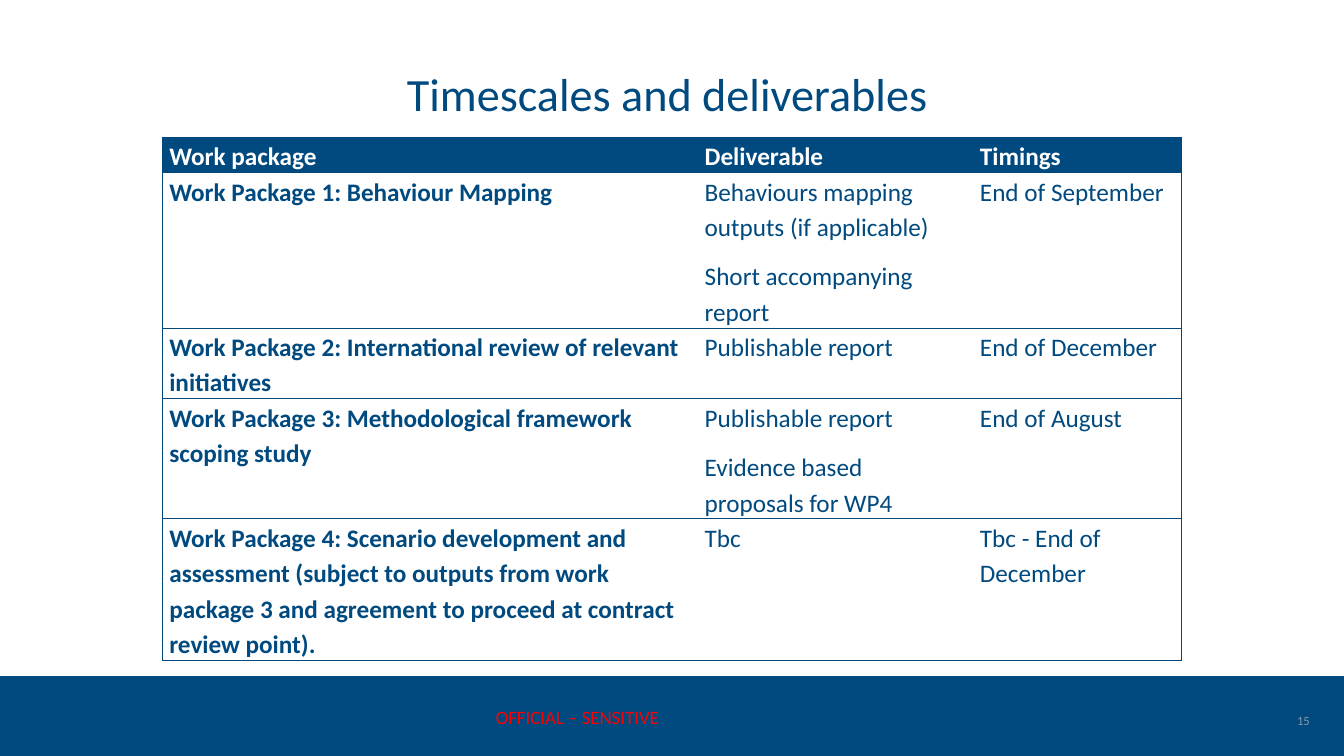
from dataclasses import dataclass

from lxml.etree import SubElement
from pptx import Presentation
from pptx.dml.color import RGBColor
from pptx.enum.shapes import MSO_SHAPE
from pptx.enum.text import MSO_ANCHOR, PP_ALIGN
from pptx.oxml.ns import qn
from pptx.slide import Slide
from pptx.table import _Cell as Cell
from pptx.text.text import _Paragraph as Paragraph
from pptx.util import Inches, Pt

FONT = "Calibri"
BLUE = "004A7F"
BORDER = "00487C"
WHITE = "FFFFFF"


@dataclass
class Label:
    text: str
    left: float
    top: float
    width: float
    height: float
    size: float
    color: str
    align: PP_ALIGN = PP_ALIGN.LEFT
    anchor: MSO_ANCHOR = MSO_ANCHOR.TOP


@dataclass
class WorkPackage:
    name: str
    deliverables: str
    timing: str
    height: float


LABELS = [
    Label("Timescales and deliverables ", 0.67, 0.3, 12, 1.25, 33, BLUE,
          PP_ALIGN.CENTER, MSO_ANCHOR.MIDDLE),
    Label("15", 9.98, 6.95, 3.11, 0.4, 9, "8C96AB",
          PP_ALIGN.RIGHT, MSO_ANCHOR.MIDDLE),
    Label("OFFICIAL – SENSITIVE", 4.82, 6.95, 2.57, 0.4, 13.5, "FF0000"),
]

COLUMN_WIDTHS = [5.31, 2.73, 2.07]
ROWS = [
    WorkPackage("Work package", "Deliverable", "Timings", 0.35),
    WorkPackage("Work Package 1: Behaviour Mapping",
                "Behaviours mapping outputs (if applicable)\n"
                "Short accompanying report",
                "End of September", 1.54),
    WorkPackage("Work Package 2: International review of relevant initiatives",
                "Publishable report", "End of December", 0.7),
    WorkPackage("Work Package 3: Methodological framework scoping study",
                "Publishable report\nEvidence based proposals for WP4",
                "End of August", 1.19),
    WorkPackage("Work Package 4: Scenario development and assessment (subject "
                "to outputs from work package 3 and agreement to proceed at "
                "contract review point).",
                "Tbc", "Tbc - End of December", 1.4),
]


def rgb(color: str) -> RGBColor:
    return RGBColor.from_string(color)


def format_runs(paragraph: Paragraph, size: float, color: str,
                bold: bool = False) -> None:
    for run in paragraph.runs:
        run.font.name = FONT
        run.font.size = Pt(size)
        run.font.bold = bold
        run.font.color.rgb = rgb(color)


def add_footer_band(slide: Slide) -> None:
    band = slide.shapes.add_shape(MSO_SHAPE.RECTANGLE, Inches(0), Inches(6.72),
                                  Inches(13.33), Inches(0.8))
    band.shadow.inherit = False
    band.fill.solid()
    band.fill.fore_color.rgb = rgb(BLUE)
    band.line.color.rgb = rgb(BLUE)
    band.line.width = Pt(2)


def add_label(slide: Slide, label: Label) -> None:
    box = slide.shapes.add_textbox(Inches(label.left), Inches(label.top),
                                   Inches(label.width), Inches(label.height))
    frame = box.text_frame
    frame.word_wrap = True
    frame.vertical_anchor = label.anchor
    frame.text = label.text
    paragraph = frame.paragraphs[0]
    paragraph.alignment = label.align
    format_runs(paragraph, label.size, label.color)


def set_borders(cell: Cell, sides: str) -> None:
    """Draw the sides named by L, R, T and B, and clear the others."""
    properties = cell._tc.get_or_add_tcPr()
    for side in "LRTB":
        line = SubElement(properties, qn(f"a:ln{side}"), w=str(Pt(0.75)))
        if side in sides:
            fill = SubElement(line, qn("a:solidFill"))
            SubElement(fill, qn("a:srgbClr"), val=BORDER)
        else:
            SubElement(line, qn("a:noFill"))


def fill_cell(cell: Cell, text: str, is_header: bool, bold: bool) -> None:
    cell.margin_left = cell.margin_right = Inches(0.07)
    cell.margin_top = cell.margin_bottom = Inches(0)
    cell.fill.solid()
    cell.fill.fore_color.rgb = rgb(BLUE if is_header else WHITE)
    cell.text_frame.text = text
    for paragraph in cell.text_frame.paragraphs:
        paragraph.line_spacing = 1.15
        paragraph.space_after = Pt(10)
        format_runs(paragraph, 18, WHITE if is_header else BLUE, bold)


def add_work_package_table(slide: Slide) -> None:
    frame = slide.shapes.add_table(
        len(ROWS), len(COLUMN_WIDTHS), Inches(1.61), Inches(1.36),
        Inches(sum(COLUMN_WIDTHS)), Inches(sum(row.height for row in ROWS)))
    table = frame.table
    table.horz_banding = False
    for column, width in zip(table.columns, COLUMN_WIDTHS):
        column.width = Inches(width)
    last_column = len(COLUMN_WIDTHS) - 1
    for row_index, row in enumerate(ROWS):
        table.rows[row_index].height = Inches(row.height)
        is_header = row_index == 0
        for column_index, text in enumerate(
                (row.name, row.deliverables, row.timing)):
            cell = table.cell(row_index, column_index)
            outer = {0: "L", last_column: "R"}.get(column_index, "")
            set_borders(cell, "TB" + outer)
            fill_cell(cell, text, is_header, is_header or column_index == 0)


def main() -> None:
    presentation = Presentation()
    presentation.slide_width = Inches(13.33)
    presentation.slide_height = Inches(7.5)
    slide = presentation.slides.add_slide(presentation.slide_layouts[6])
    add_footer_band(slide)
    add_work_package_table(slide)
    for label in LABELS:
        add_label(slide, label)
    presentation.save("out.pptx")


if __name__ == "__main__":
    main()
